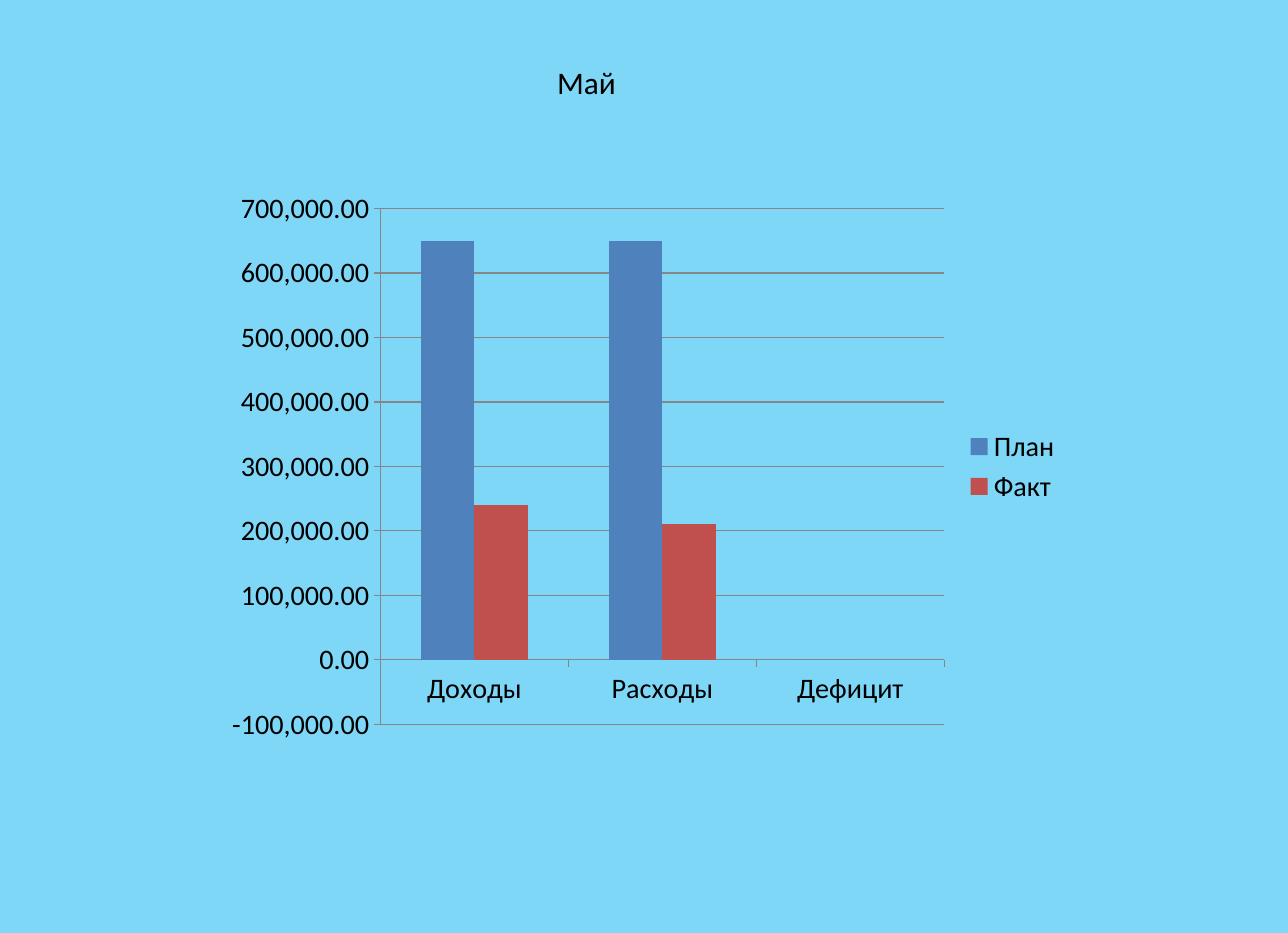
from pptx import Presentation
from pptx.chart.data import CategoryChartData
from pptx.dml.color import RGBColor
from pptx.enum.chart import XL_CHART_TYPE as ChartType
from pptx.enum.chart import XL_LEGEND_POSITION as LegendPosition
from pptx.enum.chart import XL_TICK_MARK as TickMark
from pptx.enum.text import MSO_AUTO_SIZE as AutoSize
from pptx.util import Pt

EMU_PER_PX = 8106
FONT = "Calibri"
COLORS = {
    "background": "7FD7F7",
    "text": "000000",
    "axis": "868686",
    "План": "4F81BD",
    "Факт": "C0504D",
}
CATEGORIES = ["Доходы", "Расходы", "Дефицит"]
BUDGET = {
    "План": [650000, 650000, 0],
    "Факт": [240000, 210000, None],
}


def px(*lengths):
    """Turn pixel lengths into EMU."""
    return [length * EMU_PER_PX for length in lengths]


def color(name):
    """Look up a named colour."""
    return RGBColor.from_string(COLORS[name])


def style_font(font, size):
    """Apply the common face and colour at the given size."""
    font.name = FONT
    font.size = Pt(size)
    font.color.rgb = color("text")


def style_line(line):
    """Apply the thin grey line of axes and grid."""
    line.color.rgb = color("axis")
    line.width = Pt(0.75)


def add_month(slide, box):
    """Write the month heading in the box."""
    frame = slide.shapes.add_textbox(*px(*box)).text_frame
    frame.word_wrap = False
    frame.auto_size = AutoSize.SHAPE_TO_FIT_TEXT
    month = frame.paragraphs[0]
    month.text = "Май"
    style_font(month.font, 20)


def add_budget_chart(slide, box):
    """Draw planned and actual budget columns in the box."""
    budget = CategoryChartData(number_format="#,##0.00")
    budget.categories = CATEGORIES
    for name, amounts in BUDGET.items():
        budget.add_series(name, amounts)
    chart = slide.shapes.add_chart(
        ChartType.COLUMN_CLUSTERED, *px(*box), budget
    ).chart
    style_font(chart.font, 18)
    chart.has_title = False
    chart.has_legend = True
    chart.legend.position = LegendPosition.RIGHT
    chart.legend.include_in_layout = False

    columns = chart.plots[0]
    columns.vary_by_categories = False
    columns.gap_width = 150
    columns.overlap = 0
    for series in columns.series:
        series.invert_if_negative = False
        series.format.fill.solid()
        series.format.fill.fore_color.rgb = color(series.name)

    amount_axis = chart.value_axis
    for axis in (chart.category_axis, amount_axis):
        axis.major_tick_mark = TickMark.OUTSIDE
        axis.minor_tick_mark = TickMark.NONE
        style_line(axis.format.line)
    amount_axis.minimum_scale = -100000
    amount_axis.maximum_scale = 700000
    amount_axis.major_unit = 100000
    amount_axis.tick_labels.number_format = "#,##0.00"
    amount_axis.tick_labels.number_format_is_linked = False
    amount_axis.has_major_gridlines = True
    style_line(amount_axis.major_gridlines.format.line)


def main():
    """Build and save the budget slide."""
    deck = Presentation()
    deck.slide_width, deck.slide_height = px(1288, 933)
    slide = deck.slides.add_slide(deck.slide_layouts[6])
    slide.background.fill.solid()
    slide.background.fill.fore_color.rgb = color("background")
    add_month(slide, (546, 58, 82, 50))
    add_budget_chart(slide, (215, 180, 858, 573))
    deck.save("out.pptx")


if __name__ == "__main__":
    main()
